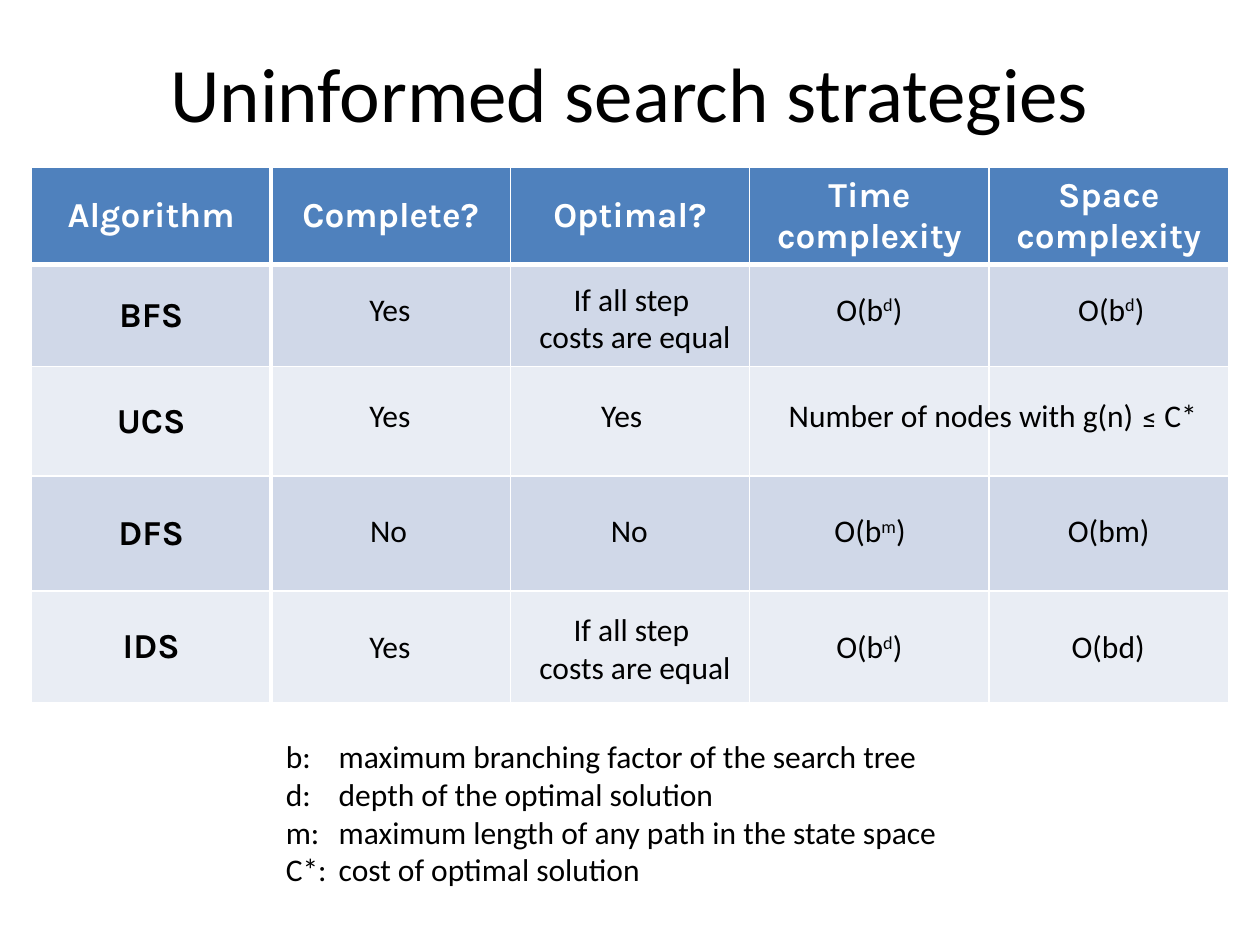
"""Build the slide that compares uninformed search strategies."""
from dataclasses import dataclass

from pptx import Presentation
from pptx import util as u
from pptx.dml.color import RGBColor
from pptx.enum import text
from pptx.oxml import parse_xml
from pptx.oxml.ns import nsdecls


@dataclass(frozen=True)
class Theme:
    """Colours, fonts and type sizes."""
    ink: str = "000000"
    paper: str = "FFFFFF"
    header: str = "4F81BD"
    bands: tuple = ("D0D8E8", "E9EDF4")
    body_font: str = "Calibri"
    table_font: str = "Karla"
    title_size: int = 44
    table_size: int = 20
    body_size: int = 18


class SlideBuilder:
    """Hold the theme and the current page."""

    def __init__(self, page, theme):
        """Keep the page and its theme."""
        self.page = page
        self.theme = theme

    def span(self, para, words, size, font=None, color=None, bold=False, raised=False):
        """Add one formatted run."""
        span = para.add_run()
        span.text = words
        span.font.size = u.Pt(size)
        span.font.name = font or self.theme.body_font
        span.font.bold = bold
        span.font.color.rgb = RGBColor.from_string(color or self.theme.ink)
        if raised:
            span.font._element.set("baseline", "30000")

    def title(self, words, left, top, width, height):
        """Place and fill the title placeholder."""
        box = self.page.shapes.title
        box.left, box.top, box.width, box.height = map(u.Inches, (left, top, width, height))
        box.text_frame.vertical_anchor = text.MSO_ANCHOR.MIDDLE
        para = box.text_frame.paragraphs[0]
        para.alignment = text.PP_ALIGN.CENTER
        self.span(para, words, self.theme.title_size)

    def border(self, cell, side, width):
        """Draw one edge of a cell."""
        cell._tc.get_or_add_tcPr().append(parse_xml(
            f'<a:ln{side} {nsdecls("a")} w="{u.Pt(width)}"><a:solidFill>'
            f'<a:srgbClr val="{self.theme.paper}"/></a:solidFill></a:ln{side}>'))

    def cell(self, cell, words, row, column):
        """Format one table cell."""
        is_header = row == 0
        widths = {"L": 3 if column == 1 else 1, "R": 3 if column == 0 else 1,
                  "T": 1, "B": 3 if is_header else 1}
        for side, width in widths.items():
            self.border(cell, side, width)
        cell.fill.solid()
        fill = self.theme.header if is_header else self.theme.bands[(row - 1) % 2]
        cell.fill.fore_color.rgb = RGBColor.from_string(fill)
        cell.vertical_anchor = text.MSO_ANCHOR.MIDDLE
        if words:
            para = cell.text_frame.paragraphs[0]
            para.alignment = text.PP_ALIGN.CENTER
            color = self.theme.paper if is_header else self.theme.ink
            self.span(para, words, self.theme.table_size, self.theme.table_font, color, True)

    def table(self, headings, names, left, top, width, heights):
        """Add the grid with a heading row and a naming column."""
        table = self.page.shapes.add_table(
            len(heights), len(headings), u.Inches(left), u.Inches(top),
            u.Inches(width), u.Inches(sum(heights))).table
        for column in table.columns:
            column.width = u.Inches(width / len(headings))
        rows = [headings] + [[name] + [""] * (len(headings) - 1) for name in names]
        for row, (words, height) in enumerate(zip(rows, heights)):
            table.rows[row].height = u.Inches(height)
            for column, word in enumerate(words):
                self.cell(table.cell(row, column), word, row, column)

    def box(self, left, top, width, height, wrap):
        """Add an empty text box and return its frame."""
        frame = self.page.shapes.add_textbox(
            *map(u.Inches, (left, top, width, height))).text_frame
        frame.word_wrap = wrap
        frame.auto_size = text.MSO_AUTO_SIZE.SHAPE_TO_FIT_TEXT
        return frame

    def answer(self, parts, left, top, width, height=0.4, wrap=False):
        """Add a centred answer made of (words, kind) parts."""
        para = self.box(left, top, width, height, wrap).paragraphs[0]
        para.alignment = text.PP_ALIGN.CENTER
        for words, kind in parts:
            if kind == "break":
                para.add_line_break()
                continue
            font = self.theme.table_font if kind == "symbol" else None
            self.span(para, words, self.theme.body_size, font, raised=kind == "raised")

    def legend(self, entries, left, top, width, height):
        """Add symbols with their meanings on a hanging indent."""
        frame = self.box(left, top, width, height, True)
        for index, (symbol, meaning) in enumerate(entries):
            para = frame.paragraphs[0] if index == 0 else frame.add_paragraph()
            properties = para._p.get_or_add_pPr()
            properties.set("marL", str(u.Inches(0.92)))
            properties.set("indent", str(u.Inches(-0.42)))
            self.span(para, f"{symbol}:\t{meaning}", self.theme.body_size)


def plain(words):
    """Return an answer of one plain part."""
    return [(words, "plain")]


def power(exponent):
    """Return the parts of an exponential bound."""
    return [("O(b", "plain"), (exponent, "raised"), (")", "plain")]


def main():
    """Compose and save the deck."""
    deck = Presentation()
    deck.slide_width, deck.slide_height = u.Inches(10), u.Inches(7.5)
    page = deck.slides.add_slide(deck.slide_layouts[5])
    builder = SlideBuilder(page, Theme())

    builder.title("Uninformed search strategies", 0.5, 0.25, 9, 0.95)
    builder.table(
        ["Algorithm", "Complete?", "Optimal?", "Time complexity", "Space complexity"],
        ["BFS", "UCS", "DFS", "IDS"], 0.25, 1.33, 9.5, [0.77, 0.81, 0.87, 0.91, 0.89])
    builder.legend([
        ("b", "maximum branching factor of the search tree"),
        ("d", "depth of the optimal solution"),
        ("m", "maximum length of any path in the state space"),
        ("C*", "cost of optimal solution"),
    ], 1.67, 5.8, 7.83, 1.31)

    bfs, ucs, dfs, ids = 2.25, 3.09, 4.01, 4.93
    for words, top, width in [("Yes", bfs, 0.53), ("Yes", ucs, 0.53),
                              ("No", dfs, 0.51), ("Yes", ids, 0.53)]:
        builder.answer(plain(words), 2.83, top, width)

    equal_costs = [("If all step ", "plain"), ("", "break"), ("costs are equal", "plain")]
    for top in (2.17, 4.79):
        builder.answer(equal_costs, 3.92, top, 2.24, 0.71, wrap=True)
    builder.answer(plain("Yes"), 4.67, ucs, 0.53)
    builder.answer(plain("No"), 4.74, dfs, 0.51)

    for parts, left, top, width in [
        (power("d"), 6.53, bfs, 0.74),
        (power("m"), 6.51, dfs, 0.79),
        (power("d"), 6.53, ids, 0.74),
        (power("d"), 8.45, bfs, 0.74),
        (plain("O(bm)"), 8.37, dfs, 0.86),
        (plain("O(bd)"), 8.4, ids, 0.79),
    ]:
        builder.answer(parts, left, top, width)
    builder.answer([("Number of nodes with g(n) ", "plain"), ("≤", "symbol"),
                    (" C*", "plain")], 6.08, ucs, 3.6, wrap=True)

    deck.save("out.pptx")


if __name__ == "__main__":
    main()
